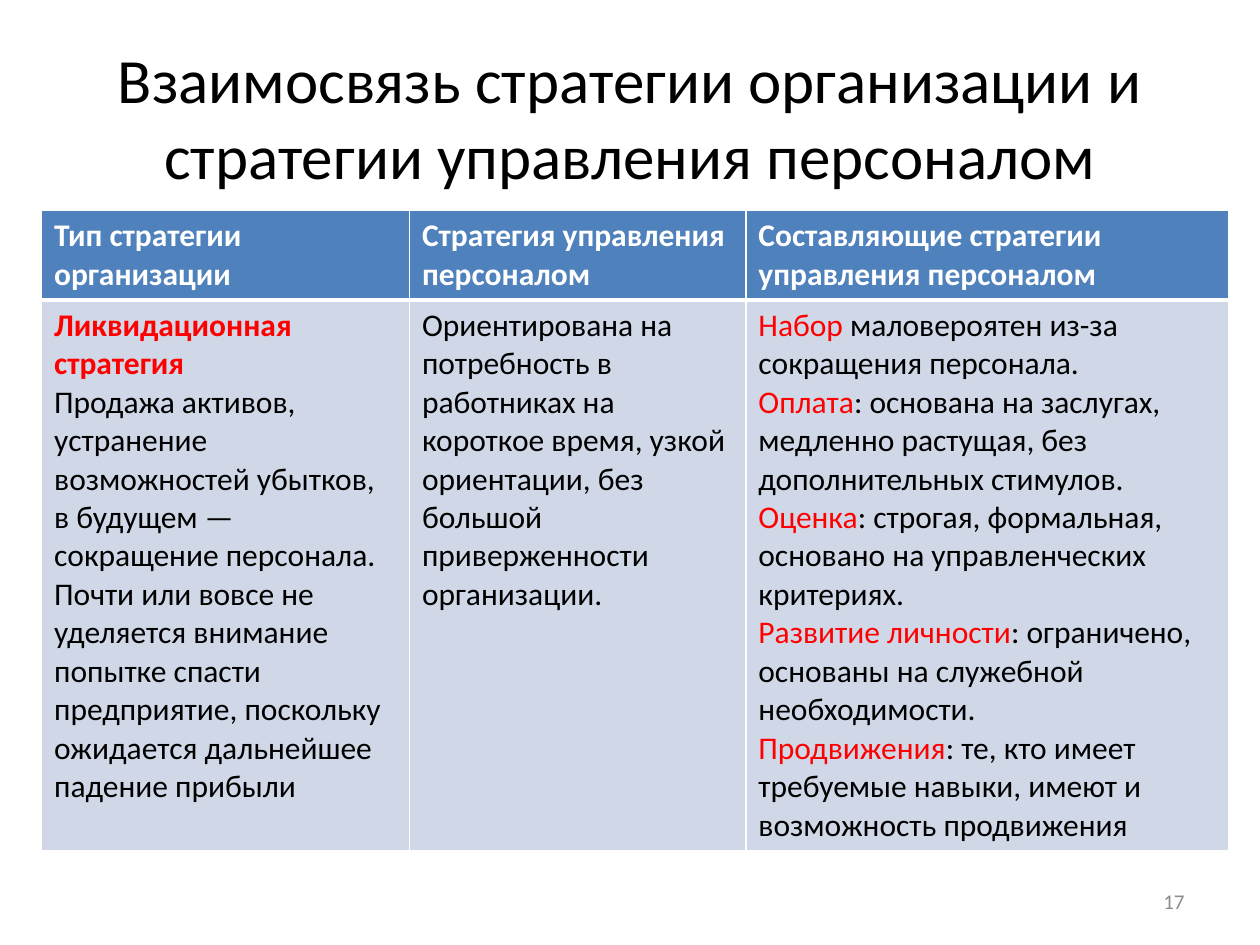
from lxml.etree import SubElement as Sub
from pptx import Presentation
from pptx.dml.color import RGBColor as Rgb
from pptx.enum.text import MSO_ANCHOR as Anchor, PP_ALIGN as Align
from pptx.oxml.ns import qn
from pptx.util import Inches, Pt

INK = {"text": "000000", "head": "FFFFFF", "key": "FF0000", "rule": "FFFFFF",
       "blue": "4F81BD", "pale": "D0D8E8", "grey": "8C8C8C"}
HEADS = ["Тип стратегии организации", "Стратегия управления персоналом",
         "Составляющие стратегии управления персоналом"]
TYPE = [
    [("Ликвидационная стратегия", "key", True)],
    [("Продажа активов, устранение возможностей убытков, в будущем — сокращение "
      "персонала. Почти или вовсе не уделяется внимание попытке спасти предприятие, "
      "поскольку ожидается дальнейшее падение прибыли", "text", False)],
]
STAFF = [[("Ориентирована на потребность в работниках на короткое время, узкой "
           "ориентации, без большой приверженности организации.", "text", False)]]
PARTS = [
    [("Набор", " маловероятен из-за сокращения персонала.")],
    [("Оплата", ": основана на заслугах, медленно растущая, без дополнительных стимулов. "),
     ("Оценка", ": строгая, формальная, основано на управленческих критериях.")],
    [("Развитие личности", ": ограничено, основаны на служебной необходимости.")],
    [("Продвижения", ": те, кто имеет требуемые навыки, имеют и возможность продвижения")],
]


class Deck:
    font = "Calibri"

    def __init__(self, wide, high):
        self.prs = Presentation()
        self.prs.slide_width, self.prs.slide_height = Inches(wide), Inches(high)
        self.wide, self.high = self.prs.slide_width, self.prs.slide_height
        self.slide = self.prs.slides.add_slide(self.prs.slide_layouts[5])

    def box(self, x, y, w, h):
        return [int(x * self.wide), int(y * self.high),
                int(w * self.wide), int(h * self.high)]

    def put(self, frame, paras, size, align=Align.LEFT):
        frame.word_wrap = True
        for i, runs in enumerate(paras):
            para = frame.paragraphs[0] if i == 0 else frame.add_paragraph()
            para.alignment = align
            for text, ink, bold in runs:
                run = para.add_run()
                run.text = text
                form = {"name": self.font, "size": Pt(size), "bold": bold}
                for key, value in form.items():
                    setattr(run.font, key, value)
                run.font.color.rgb = Rgb.from_string(INK[ink])

    def title(self, text, *place):
        head = self.slide.shapes.title
        for key, value in zip(("left", "top", "width", "height"), self.box(*place)):
            setattr(head, key, value)
        head.text_frame.vertical_anchor = Anchor.MIDDLE
        self.put(head.text_frame, [[(text, "text", False)]], 36, Align.CENTER)

    def label(self, text, ink, size, align, *place):
        frame = self.slide.shapes.add_textbox(*self.box(*place)).text_frame
        frame.vertical_anchor = Anchor.MIDDLE
        self.put(frame, [[(text, ink, False)]], size, align)

    def edge(self, cell, sides):
        props = cell._tc.get_or_add_tcPr()
        for side, width in sides.items():
            line = Sub(props, qn(f"a:ln{side}"), w=str(Pt(width)))
            fill = Sub(line, qn("a:solidFill"))
            Sub(fill, qn("a:srgbClr"), val=INK["rule"])

    def table(self, rows, fills, cols, highs, x, y):
        place = self.box(x, y, sum(cols), sum(highs))
        grid = self.slide.shapes.add_table(len(rows), len(cols), *place).table
        for col, share in zip(grid.columns, cols):
            col.width = int(share * self.wide)
        for r, (row, ink, share) in enumerate(zip(rows, fills, highs)):
            grid.rows[r].height = int(share * self.high)
            for c, paras in enumerate(row):
                cell = grid.cell(r, c)
                self.put(cell.text_frame, paras, 18)
                self.edge(cell, {"L": 1, "R": 1, "T": 3 if r else 1, "B": 1 if r else 3})
                cell.fill.solid()
                cell.fill.fore_color.rgb = Rgb.from_string(INK[ink])


def main():
    deck = Deck(10, 7.5)
    deck.title("Взаимосвязь стратегии организации и стратегии управления персоналом",
               0.05, 0.04, 0.9, 1 / 6)
    heads = [[[(text, "head", True)]] for text in HEADS]
    parts = [[run for key, rest in para
              for run in ((key, "key", False), (rest, "text", False))] for para in PARTS]
    cols = [inches / 10 for inches in (2.92, 2.67, 3.83)]
    deck.table([heads, [TYPE, STAFF, parts]], ["blue", "pale"], cols, (0.09, 0.58),
               0.33 / 10, 1.67 / 7.5)
    deck.label("17", "grey", 12, Align.RIGHT, 0.717, 6.95 / 7.5, 0.233, 0.4 / 7.5)
    deck.prs.save("out.pptx")


if __name__ == "__main__":
    main()
